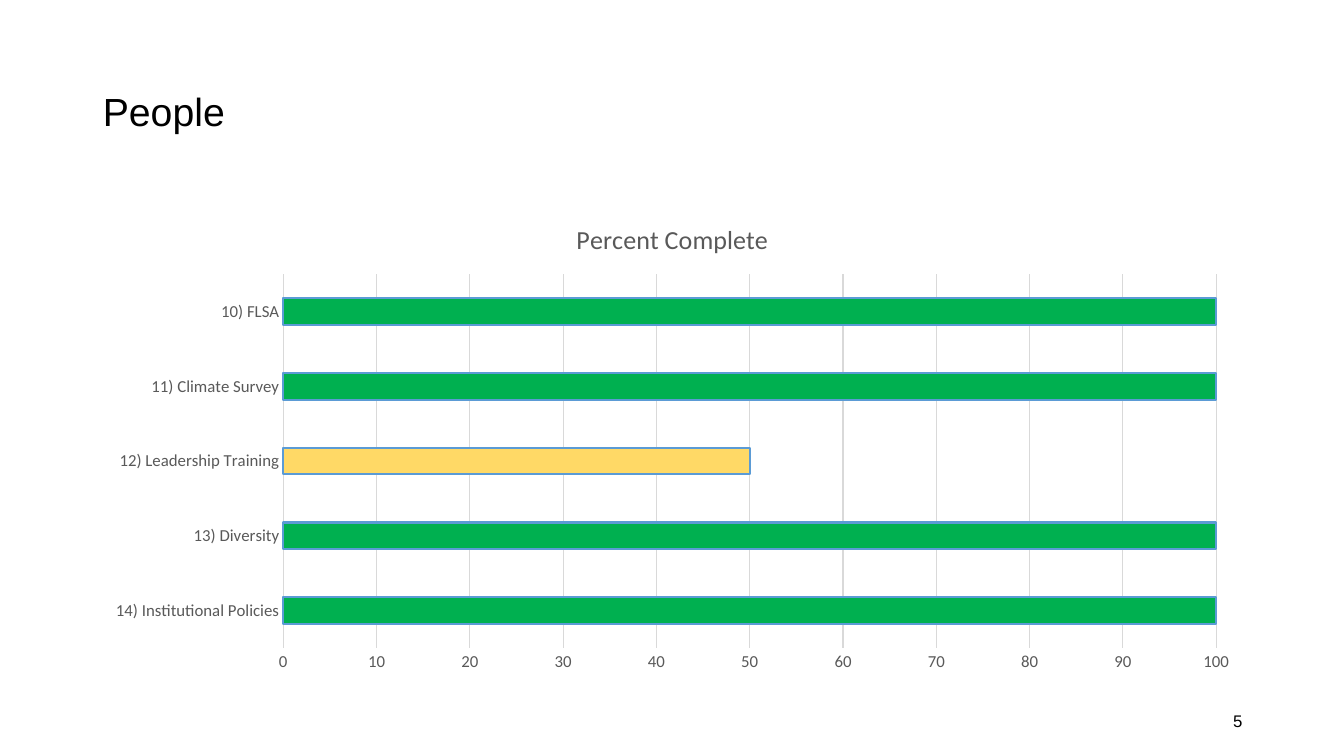
from pptx import Presentation
from pptx.chart.data import CategoryChartData
from pptx.dml.color import RGBColor
from pptx.enum import chart as ch, text as tx
from pptx.util import Inches, Pt

BLACK = RGBColor(0x00, 0x00, 0x00)
GRAY = RGBColor(0x59, 0x59, 0x59)
LIGHT_GRAY = RGBColor(0xD9, 0xD9, 0xD9)
GREEN = RGBColor(0x00, 0xB0, 0x50)
YELLOW = RGBColor(0xFF, 0xD9, 0x66)
BLUE = RGBColor(0x5B, 0x9B, 0xD5)

# Listed from the bottom bar to the top one
PROGRESS = {
    "14) Institutional Policies": 100,
    "13) Diversity": 100,
    "12) Leadership Training": 50,
    "11) Climate Survey": 100,
    "10) FLSA": 100,
}


def style_font(font, name, size, color):
    for attribute, value in {"name": name, "size": Pt(size), "bold": False}.items():
        setattr(font, attribute, value)
    font.color.rgb = color


def style_line(line, color, width):
    line.color.rgb = color
    line.width = Pt(width)


def style_bar(bar_format, fill):
    bar_format.fill.solid()
    bar_format.fill.fore_color.rgb = fill
    style_line(bar_format.line, BLUE, 1.5)


def write_text(shape, words, size, align):
    frame = shape.text_frame
    frame.word_wrap = True
    frame.vertical_anchor = tx.MSO_ANCHOR.MIDDLE
    paragraph = frame.paragraphs[0]
    paragraph.text = words
    paragraph.alignment = align
    style_font(paragraph.runs[0].font, "Arial", size, BLACK)
    return paragraph


def add_title(slide, words):
    title = slide.shapes.title
    title.left, title.top = Inches(0.92), Inches(0.4)
    title.width, title.height = Inches(11.5), Inches(1.45)
    write_text(title, words, 28, tx.PP_ALIGN.LEFT).line_spacing = 0.9


def add_page_number(slide, number):
    box = slide.shapes.add_textbox(Inches(9.42), Inches(6.95), Inches(3), Inches(0.4))
    write_text(box, number, 12, tx.PP_ALIGN.RIGHT)


def style_axes(chart):
    categories, percent = chart.category_axis, chart.value_axis
    for axis in (categories, percent):
        axis.major_tick_mark = axis.minor_tick_mark = ch.XL_TICK_MARK.NONE
        style_font(axis.tick_labels.font, "Calibri", 12, GRAY)
    categories.has_major_gridlines = False
    style_line(categories.format.line, LIGHT_GRAY, 0.75)

    scale = {"minimum_scale": 0, "maximum_scale": 100, "major_unit": 10}
    for attribute, value in scale.items():
        setattr(percent, attribute, value)
    percent.format.line.fill.background()
    style_line(percent.major_gridlines.format.line, LIGHT_GRAY, 0.75)


def add_progress_chart(slide, heading, progress):
    data = CategoryChartData(number_format="General")
    data.categories = list(progress)
    data.add_series("Series 1", list(progress.values()))
    chart = slide.shapes.add_chart(
        ch.XL_CHART_TYPE.BAR_CLUSTERED,
        Inches(0.92), Inches(2), Inches(11.5), Inches(4.76), data,
    ).chart
    style_font(chart.font, "Calibri", 10, BLACK)
    chart.has_legend = False

    chart.has_title = True
    chart.chart_title.include_in_layout = False
    title = chart.chart_title.text_frame.paragraphs[0]
    title.text = heading
    style_font(title.runs[0].font, "Calibri", 18.6, GRAY)

    style_axes(chart)
    plot = chart.plots[0]
    plot.gap_width = 182
    plot.vary_by_categories = False
    bars = plot.series[0]
    style_bar(bars.format, GREEN)
    for index, percent in enumerate(progress.values()):
        if percent < 100:
            style_bar(bars.points[index].format, YELLOW)


def main():
    deck = Presentation()
    deck.slide_width, deck.slide_height = Inches(13.33), Inches(7.5)
    slide = deck.slides.add_slide(deck.slide_layouts[5])
    add_title(slide, "People")
    add_progress_chart(slide, "Percent Complete", PROGRESS)
    add_page_number(slide, "5")
    deck.save("out.pptx")


if __name__ == "__main__":
    main()
